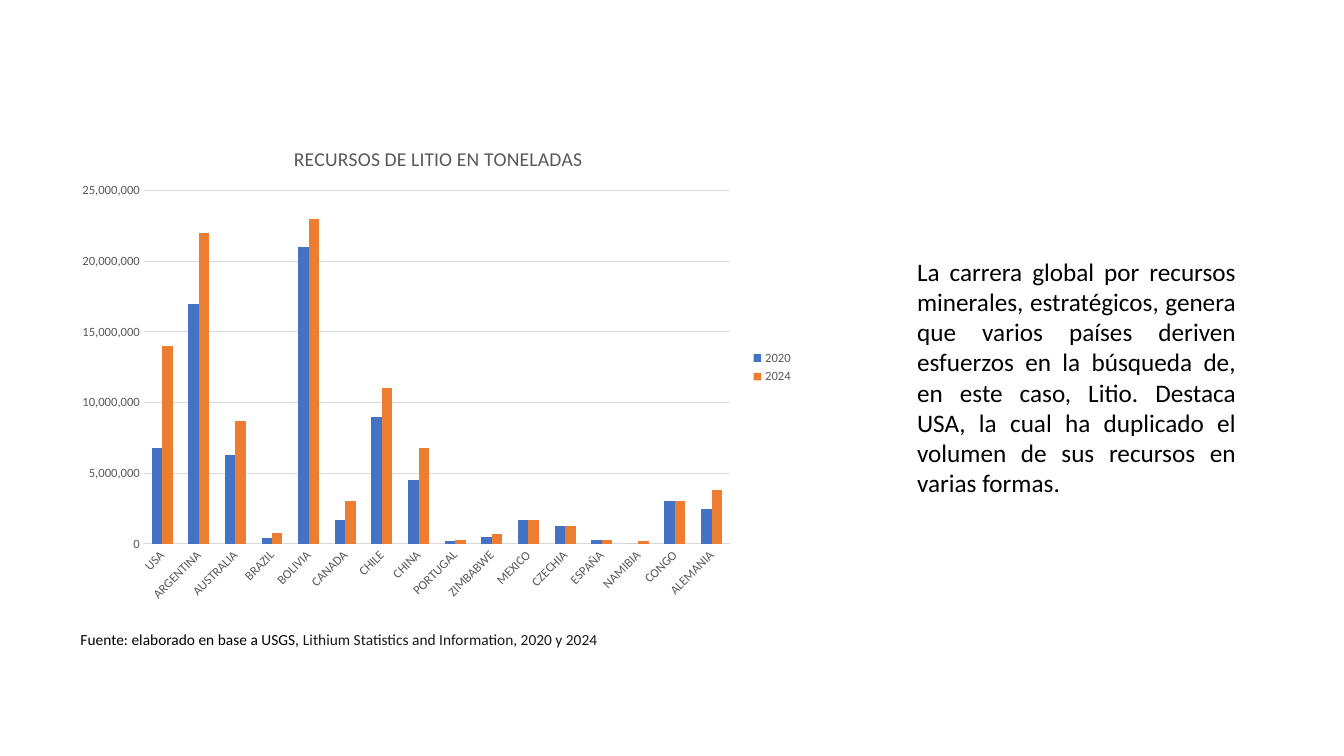
"""Build a slide comparing lithium resources by country in 2020 and 2024."""
from typing import NamedTuple

from pptx import Presentation
from pptx.chart.data import CategoryChartData
from pptx.dml.color import RGBColor
from pptx.enum.chart import XL_CHART_TYPE as ChartType
from pptx.enum.chart import XL_LEGEND_POSITION as LegendPosition
from pptx.enum.chart import XL_TICK_MARK as TickMark
from pptx.enum.text import PP_ALIGN as Align
from pptx.oxml import parse_xml
from pptx.oxml.ns import nsdecls
from pptx.util import Pt

BLACK = RGBColor(0x00, 0x00, 0x00)
NEAR_BLACK = RGBColor(0x17, 0x17, 0x17)
GRAY = RGBColor(0x59, 0x59, 0x59)
LIGHT_GRAY = RGBColor(0xD9, 0xD9, 0xD9)
BLUE = RGBColor(0x44, 0x72, 0xC4)
ORANGE = RGBColor(0xED, 0x7D, 0x31)
FONT_NAME = "Calibri"


class Box(NamedTuple):
    left: float
    top: float
    width: float
    height: float


class TextRun(NamedTuple):
    text: str
    color: RGBColor


class TextBlock(NamedTuple):
    box: Box
    size: float
    align: Align
    runs: tuple[TextRun, ...]


class Resource(NamedTuple):
    country: str
    tons_2020: int
    tons_2024: int


RESOURCES = (
    Resource("USA", 6_800_000, 14_000_000),
    Resource("ARGENTINA", 17_000_000, 22_000_000),
    Resource("AUSTRALIA", 6_300_000, 8_700_000),
    Resource("BRAZIL", 400_000, 800_000),
    Resource("BOLIVIA", 21_000_000, 23_000_000),
    Resource("CANADA", 1_700_000, 3_000_000),
    Resource("CHILE", 9_000_000, 11_000_000),
    Resource("CHINA", 4_500_000, 6_800_000),
    Resource("PORTUGAL", 200_000, 300_000),
    Resource("ZIMBABWE", 500_000, 700_000),
    Resource("MEXICO", 1_700_000, 1_700_000),
    Resource("CZECHIA", 1_300_000, 1_300_000),
    Resource("ESPAÑA", 300_000, 300_000),
    Resource("NAMIBIA", 0, 200_000),
    Resource("CONGO", 3_000_000, 3_000_000),
    Resource("ALEMANIA", 2_500_000, 3_800_000),
)
CHART_BOX = Box(50.4, 87.1, 523.4, 350.6)
TEXT_BLOCKS = (
    TextBlock(Box(50.4, 446.4, 421.9, 42.5), 11, Align.LEFT, (
        TextRun("Fuente: elaborado en base a USGS, ", BLACK),
        TextRun("Lithium Statistics and Information, 2020 y 2024", NEAR_BLACK),
    )),
    TextBlock(Box(648, 179.3, 241.9, 181.4), 18, Align.JUSTIFY, (
        TextRun(
            "La carrera global por recursos minerales, estratégicos, genera que "
            "varios países deriven esfuerzos en la búsqueda de, en este caso, "
            "Litio. Destaca USA, la cual ha duplicado el volumen de sus recursos "
            "en varias formas.", BLACK),
    )),
)


def set_font(font, size: float, color: RGBColor) -> None:
    """Apply the slide's typeface with a size and colour."""
    formats = {"name": FONT_NAME, "size": Pt(size), "bold": False}
    for name, value in formats.items():
        setattr(font, name, value)
    font.color.rgb = color


def set_line(line) -> None:
    """Give an axis or gridline its thin light stroke."""
    line.color.rgb = LIGHT_GRAY
    line.width = Pt(0.75)


def set_layout(parent, index: int, target: str, values: dict[str, float]) -> None:
    """Place a chart part by fractions of the chart area."""
    for layout in parent.xpath("c:layout"):
        parent.remove(layout)
    modes = "".join(f'<c:{key}Mode val="edge"/>' for key in "xy")
    sizes = "".join(f'<c:{key} val="{value}"/>' for key, value in values.items())
    parent.insert(index, parse_xml(
        f'<c:layout {nsdecls("c")}><c:manualLayout>{target}{modes}{sizes}'
        "</c:manualLayout></c:layout>"))


def add_resource_chart(slide) -> None:
    """Draw the clustered columns of lithium resources."""
    data = CategoryChartData(number_format="#,##0")
    data.categories = [resource.country for resource in RESOURCES]
    data.add_series("2020", [resource.tons_2020 for resource in RESOURCES])
    data.add_series("2024", [resource.tons_2024 for resource in RESOURCES])
    chart = slide.shapes.add_chart(
        ChartType.COLUMN_CLUSTERED, *map(Pt, CHART_BOX), data).chart
    set_font(chart.font, 10, BLACK)

    chart.has_title = True
    title_paragraph = chart.chart_title.text_frame.paragraphs[0]
    title_run = title_paragraph.add_run()
    title_run.text = "RECURSOS DE LITIO EN TONELADAS"
    set_font(title_run.font, 14, GRAY)

    plot = chart.plots[0]
    for name, value in {"gap_width": 150, "overlap": 0, "vary_by_categories": False}.items():
        setattr(plot, name, value)
    for series, color in zip(plot.series, (BLUE, ORANGE)):
        series.format.fill.solid()
        series.format.fill.fore_color.rgb = color

    category_axis, value_axis = chart.category_axis, chart.value_axis
    for axis in (category_axis, value_axis):
        axis.major_tick_mark = axis.minor_tick_mark = TickMark.NONE
        set_font(axis.tick_labels.font, 9, GRAY)
    set_line(category_axis.format.line)
    value_axis.format.line.fill.background()
    set_line(value_axis.major_gridlines.format.line)
    scale = {"minimum_scale": 0, "maximum_scale": 25_000_000, "major_unit": 5_000_000}
    for name, value in scale.items():
        setattr(value_axis, name, value)
    value_axis.tick_labels.number_format = "#,##0"
    value_axis.tick_labels.number_format_is_linked = False

    chart.has_legend = True
    chart.legend.position = LegendPosition.RIGHT
    chart.legend.include_in_layout = False
    set_font(chart.legend.font, 9, GRAY)

    chart_xml = chart.element if hasattr(chart, "element") else chart._chartSpace
    chart_xml.xpath("//c:catAx/c:txPr/a:bodyPr")[0].set("rot", "-2700000")
    set_layout(chart_xml.xpath("//c:chart/c:title")[0], 1, "", {"x": 0.3, "y": 0.04})
    set_layout(chart_xml.xpath("//c:plotArea")[0], 0, '<c:layoutTarget val="inner"/>',
               {"x": 0.1, "y": 0.14, "w": 0.8, "h": 0.72})


def add_text_block(slide, block: TextBlock) -> None:
    """Add one wrapped text box."""
    text_frame = slide.shapes.add_textbox(*map(Pt, block.box)).text_frame
    text_frame.word_wrap = True
    paragraph = text_frame.paragraphs[0]
    paragraph.alignment = block.align
    for text_run in block.runs:
        run = paragraph.add_run()
        run.text = text_run.text
        set_font(run.font, block.size, text_run.color)


def main() -> None:
    """Create and save the presentation."""
    presentation = Presentation()
    presentation.slide_width, presentation.slide_height = Pt(960), Pt(540)
    slide = presentation.slides.add_slide(presentation.slide_layouts[6])
    add_resource_chart(slide)
    for block in TEXT_BLOCKS:
        add_text_block(slide, block)
    presentation.save("out.pptx")


if __name__ == "__main__":
    main()
